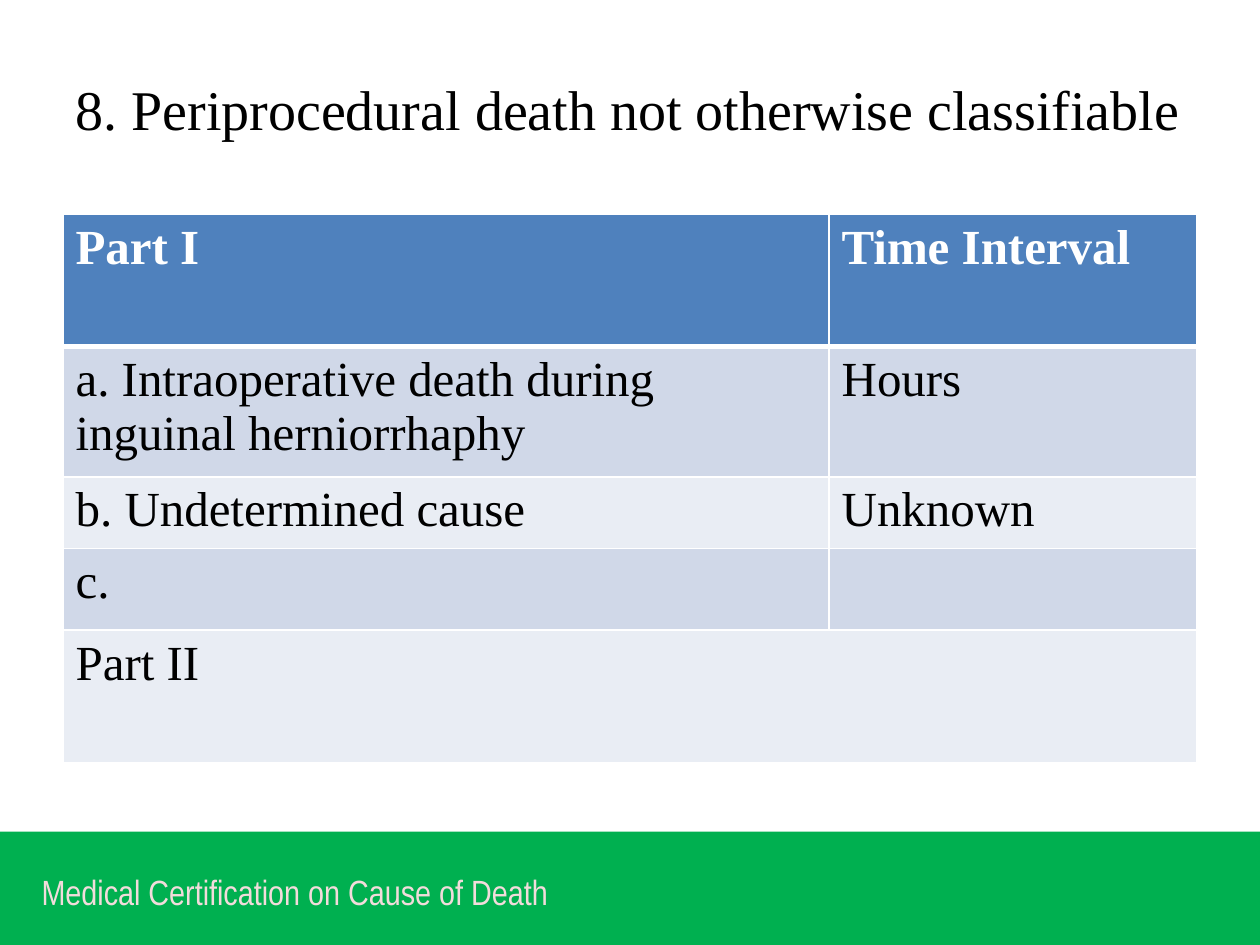
"""Build the slide on a periprocedural death certificate."""
from lxml.etree import SubElement
from pptx import Presentation
from pptx.dml.color import RGBColor as RGB
from pptx.enum.shapes import MSO_SHAPE as Shape
from pptx.enum.text import MSO_ANCHOR as Anchor
from pptx.oxml.ns import qn
from pptx.util import Inches, Pt

WHITE = RGB(0xFF, 0xFF, 0xFF)
BLACK = RGB(0, 0, 0)
GREEN = RGB(0x00, 0xB0, 0x50)
PINK = RGB(0xF2, 0xDC, 0xDB)
BLUE = RGB(0x4F, 0x81, 0xBD)
BANDS = [RGB(0xE9, 0xED, 0xF4), RGB(0xD0, 0xD8, 0xE8)]
SERIF, NARROW = "Times New Roman", "Arial Narrow"

TITLE = "8. Periprocedural death not otherwise classifiable"
FOOTER = "Medical Certification on Cause of Death"
ROWS = [
    (1.05, "Part I", "Time Interval"),
    (0.9, "a. Intraoperative death during inguinal herniorrhaphy", "Hours"),
    (0.49, "b. Undetermined cause", "Unknown"),
    (0.65, "c.", ""),
    (1.05, "Part II", ""),
]
COLS = [6.08, 2.92]


def add_run(para, text, size, face, color, bold=False):
    run = para.add_run()
    run.text = text
    font = run.font
    font.size, font.name, font.bold = Pt(size), face, bold
    font.color.rgb = color


def add_box(slide, left, top, width, height):
    box = slide.shapes.add_textbox(*map(Inches, (left, top, width, height)))
    box.text_frame.word_wrap = True
    return box.text_frame


def add_edge(cell, side, width):
    line = SubElement(cell._tc.get_or_add_tcPr(), qn("a:ln" + side), w=str(Pt(width)))
    fill = SubElement(line, qn("a:solidFill"))
    SubElement(fill, qn("a:srgbClr"), val=str(WHITE))


def add_grid(slide):
    size = map(Inches, (0.5, 1.7, sum(COLS), sum(row[0] for row in ROWS)))
    table = slide.shapes.add_table(len(ROWS), len(COLS), *size).table
    for col, width in zip(table.columns, COLS):
        col.width = Inches(width)
    for i, (height, *texts) in enumerate(ROWS):
        table.rows[i].height = Inches(height)
        head = i == 0
        for j, text in enumerate(texts):
            cell = table.cell(i, j)
            for side in "LRTB":
                thick = (head and side == "B") or (i == 1 and side == "T")
                add_edge(cell, side, 3 if thick else 1)
            cell.fill.solid()
            cell.fill.fore_color.rgb = BLUE if head else BANDS[i % 2]
            if text:
                para = cell.text_frame.paragraphs[0]
                add_run(para, text, 28, SERIF, WHITE if head else BLACK, head)
    last = len(ROWS) - 1
    table.cell(last, 0).merge(table.cell(last, 1))


def main():
    deck = Presentation()
    deck.slide_width, deck.slide_height = Inches(10), Inches(7.5)
    slide = deck.slides.add_slide(deck.slide_layouts[6])

    band = slide.shapes.add_shape(Shape.RECTANGLE, *map(Inches, (0, 6.6, 10, 0.92)))
    band.shadow.inherit = False
    band.fill.solid()
    band.fill.fore_color.rgb = GREEN
    band.line.fill.background()

    foot = add_box(slide, 0.33, 6.85, 5.17, 0.47)
    foot.margin_left = foot.margin_right = foot.margin_top = foot.margin_bottom = 0
    add_run(foot.paragraphs[0], FOOTER, 20, NARROW, PINK)
    add_run(foot.paragraphs[0], " ", 24, NARROW, PINK)

    title = add_box(slide, 0.5, 0.3, 9, 1.12)
    title.vertical_anchor = Anchor.MIDDLE
    add_run(title.paragraphs[0], TITLE, 32, SERIF, BLACK)

    add_grid(slide)
    deck.save("out.pptx")


if __name__ == "__main__":
    main()
